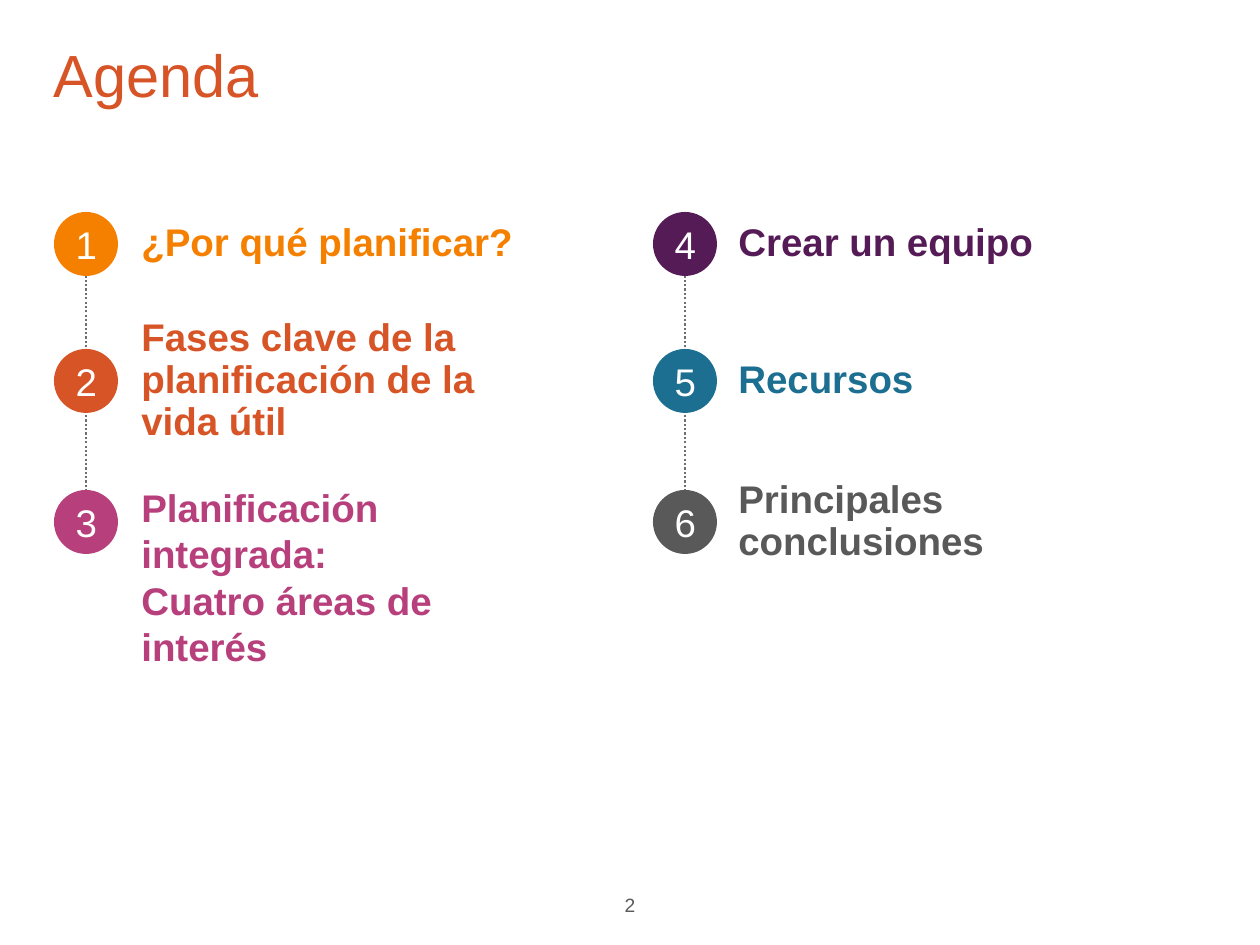
from lxml import etree
from pptx import Presentation
from pptx import util as u
from pptx.dml.color import RGBColor
from pptx.enum import dml, shapes, text
from pptx.oxml.ns import qn

EMU_PER_PX = 914400 / 126
MIDDLE, TOP = text.MSO_ANCHOR.MIDDLE, text.MSO_ANCHOR.TOP
CENTER, LEFT = text.PP_ALIGN.CENTER, text.PP_ALIGN.LEFT
CIRCLE = 64
CIRCLE_TOPS = (212, 349, 490)
COLUMNS = (
    (54, 129, (
        ("1", "¿Por qué planificar?", "F58000", 548),
        ("2", "Fases clave de la planificación de la vida útil", "D75426", 422),
        ("3", "Planificación integrada:\vCuatro áreas de interés", "B73F7C", 411),
    )),
    (653, 726, (
        ("4", "Crear un equipo", "551B57", 475),
        ("5", "Recursos", "1C6F90", 479),
        ("6", "Principales conclusiones", "595959", 446),
    )),
)


def px(*lengths):
    """Turn pixel lengths into EMU."""
    return [u.Emu(round(length * EMU_PER_PX)) for length in lengths]


def color(hex_code):
    """Turn a hex string into a colour."""
    return RGBColor.from_string(hex_code)


def write(shape, words, hex_code, size, bold=False, align=LEFT, spacing=None, **frame_format):
    """Fill a shape with one formatted paragraph."""
    frame = shape.text_frame
    for name, value in {"word_wrap": True, **frame_format}.items():
        setattr(frame, name, value)
    paragraph = frame.paragraphs[0]
    paragraph.text = words
    paragraph.alignment = align
    paragraph.line_spacing = spacing
    for run in paragraph.runs:
        for name, value in {"name": "Arial", "size": u.Pt(size), "bold": bold}.items():
            setattr(run.font, name, value)
        run.font.color.rgb = color(hex_code)


def add_text(slide, box, words, hex_code, size, **formats):
    """Add a text box."""
    write(slide.shapes.add_textbox(*px(*box)), words, hex_code, size, **formats)


def add_dotted_line(slide, x, top, bottom):
    """Add the vertical dotted line that joins a column of circles."""
    line = slide.shapes.add_connector(shapes.MSO_CONNECTOR.STRAIGHT, *px(x, bottom, x, top))
    line.line.color.rgb = color("6E6E6E")
    line.line.width = u.Pt(1.25)
    line.line.dash_style = dml.MSO_LINE.ROUND_DOT
    etree.SubElement(line._element.spPr, qn("a:effectLst"))


def add_circle(slide, left, top, number, hex_code):
    """Add a numbered circle."""
    circle = slide.shapes.add_shape(shapes.MSO_SHAPE.OVAL, *px(left, top, CIRCLE, CIRCLE))
    circle.shadow.inherit = False
    circle.fill.solid()
    circle.fill.fore_color.rgb = color(hex_code)
    circle.line.fill.background()
    write(circle, number, "FFFFFF", 22, align=CENTER, vertical_anchor=MIDDLE)


def add_label(slide, left, circle_top, words, hex_code, width):
    """Add a topic centred on its circle, or hanging from it when it has two parts."""
    if "\v" in words:
        box, formats = (left, circle_top - 12, width, 106), {"vertical_anchor": TOP}
    else:
        box = (left, circle_top + 10, width, CIRCLE - 20)
        formats = {"vertical_anchor": MIDDLE, "spacing": 0.9}
    add_text(slide, box, words, hex_code, 22, bold=True, **formats)


def add_column(slide, circle_left, label_left, topics):
    """Add one column of the agenda."""
    half = CIRCLE // 2
    add_dotted_line(slide, circle_left + half, CIRCLE_TOPS[0] + half, CIRCLE_TOPS[-1] + half)
    for top, (number, words, hex_code, width) in zip(CIRCLE_TOPS, topics):
        add_circle(slide, circle_left, top, number, hex_code)
        add_label(slide, label_left, top, words, hex_code, width)


def main():
    """Build the agenda slide."""
    deck = Presentation()
    deck.slide_width, deck.slide_height = px(1260, 945)
    slide = deck.slides.add_slide(deck.slide_layouts[6])
    add_text(slide, (590, 887, 80, 58), "2", "5B5B5B", 11, align=CENTER)
    add_text(slide, (54, 52, 1149, 98), "Agenda", "D75426", 34, spacing=0.8,
             margin_left=0, margin_top=0)
    for column in COLUMNS:
        add_column(slide, *column)
    deck.save("out.pptx")


if __name__ == "__main__":
    main()
